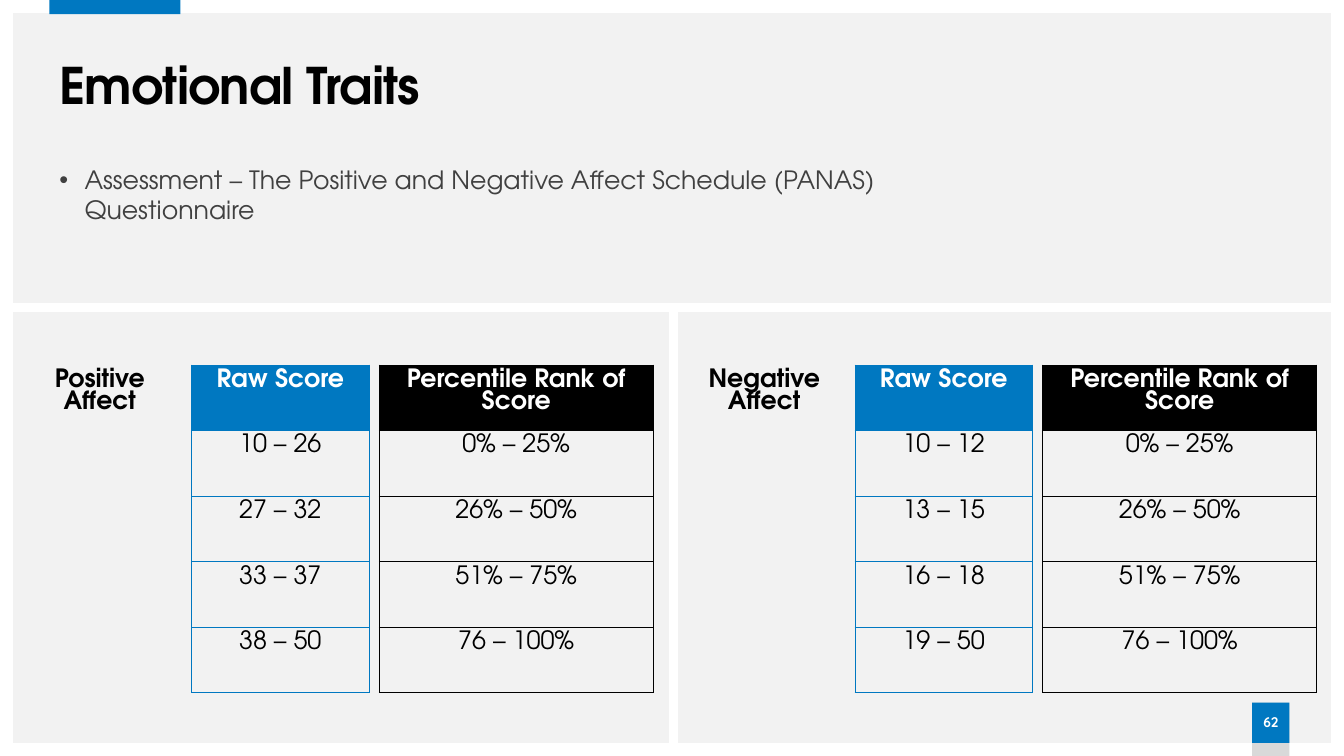
from lxml import etree
from pptx import Presentation
from pptx.dml.color import RGBColor
from pptx.enum.shapes import MSO_CONNECTOR, MSO_SHAPE
from pptx.enum.text import MSO_ANCHOR, PP_ALIGN
from pptx.oxml import parse_xml
from pptx.oxml.ns import nsdecls, qn
from pptx.util import Inches, Pt

BLUE = RGBColor(0x00, 0x78, 0xC1)
BLACK = RGBColor(0x00, 0x00, 0x00)
WHITE = RGBColor(0xFF, 0xFF, 0xFF)
PALE_GRAY = RGBColor(0xF2, 0xF2, 0xF2)
TAB_GRAY = RGBColor(0xD9, 0xD9, 0xD9)
TEXT_GRAY = RGBColor(0x40, 0x40, 0x40)
FONT = "TeX Gyre Adventor"
PLAIN_TABLE_STYLE = "{2D5ABB26-0587-4C30-8999-92F81FD0307C}"
ROW_COUNT = 5
ROW_HEIGHT = 0.65
TABLE_TOP = 3.62


def style_text(paragraph, size, color, bold=False, name=FONT):
    for span in paragraph.runs:
        span.font.name = name
        span.font.size = Pt(size)
        span.font.bold = bold
        span.font.color.rgb = color


def add_column(page, left, width, texts, color=None):
    """Add a one-column table; a color gives it borders and a filled header."""
    frame = page.shapes.add_table(
        ROW_COUNT, 1, Inches(left), Inches(TABLE_TOP),
        Inches(width), Inches(ROW_HEIGHT * ROW_COUNT))
    table = frame.table
    table.horz_banding = False
    table.first_row = False
    table._tbl.tblPr.find(qn("a:tableStyleId")).text = PLAIN_TABLE_STYLE
    for index, text in enumerate(texts):
        cell = table.cell(index, 0)
        header = index == 0
        if color is not None:
            properties = cell._tc.get_or_add_tcPr()
            for side in ("lnL", "lnR", "lnT", "lnB"):
                properties.append(parse_xml(
                    f'<a:{side} {nsdecls("a")} w="{Pt(0.5)}"><a:solidFill>'
                    f'<a:srgbClr val="{color}"/></a:solidFill></a:{side}>'))
        if header and color is not None:
            cell.fill.solid()
            cell.fill.fore_color.rgb = color
        else:
            cell.fill.background()
        if text:
            para = cell.text_frame.paragraphs[0]
            para.text = text
            para.alignment = PP_ALIGN.CENTER
            para.line_spacing = Pt(16)
            style_text(para, 18, WHITE if header and color is not None else BLACK, header)


deck = Presentation()
deck.slide_width = Inches(13.33)
deck.slide_height = Inches(7.5)
page = deck.slides.add_slide(deck.slide_layouts[5])
page.background.fill.solid()
page.background.fill.fore_color.rgb = PALE_GRAY

# Frame, top accent and page number tab
decorations = [
    (MSO_SHAPE.FRAME, 0, 0, 13.33, 7.5, WHITE),
    (MSO_SHAPE.RECTANGLE, 0.49, 0, 1.3, 0.14, BLUE),
    (MSO_SHAPE.RECTANGLE, 12.42, 6.97, 0.37, 0.53, TAB_GRAY),
    (MSO_SHAPE.RECTANGLE, 12.42, 6.97, 0.37, 0.4, BLUE),
]
for kind, left, top, width, height, color in decorations:
    shape = page.shapes.add_shape(
        kind, Inches(left), Inches(top), Inches(width), Inches(height))
    shape.shadow.inherit = False
    shape.fill.solid()
    shape.fill.fore_color.rgb = color
    shape.line.fill.background()
    if kind == MSO_SHAPE.FRAME:
        shape.adjustments[0] = 0.017

number_tab = shape.text_frame
number_tab.margin_left = number_tab.margin_right = 0
number_tab.vertical_anchor = MSO_ANCHOR.MIDDLE
para = number_tab.paragraphs[0]
para.text = "62"
para.alignment = PP_ALIGN.CENTER
para.line_spacing = 0.9
style_text(para, 10, WHITE, True, "Quicksand")

# Title and introduction
title = page.shapes.title
title.left, title.top = Inches(0.49), Inches(0.55)
title.width, title.height = Inches(12.22), Inches(0.65)
title.text_frame.vertical_anchor = MSO_ANCHOR.MIDDLE
para = title.text_frame.paragraphs[0]
para.text = "Emotional Traits"
para.alignment = PP_ALIGN.LEFT
para.line_spacing = 0.9
style_text(para, 36, BLACK, True)
para.runs[0].font._element.set("spc", "-60")

body = page.shapes.add_textbox(Inches(0.49), Inches(1.58), Inches(8.88), Inches(0.98))
body.text_frame.word_wrap = True
para = body.text_frame.paragraphs[0]
para.text = "Assessment – The Positive and Negative Affect Schedule (PANAS) Questionnaire"
bullet_properties = para._p.get_or_add_pPr()
bullet_properties.set("marL", str(Inches(0.25)))
bullet_properties.set("indent", str(Inches(-0.25)))
bullet_color = etree.SubElement(bullet_properties, qn("a:buClr"))
etree.SubElement(bullet_color, qn("a:srgbClr"), val=str(TEXT_GRAY))
etree.SubElement(bullet_properties, qn("a:buFont"), typeface="Arial")
etree.SubElement(bullet_properties, qn("a:buChar"), char="•")
style_text(para, 18, TEXT_GRAY)

# Panel dividers
for start_x, start_y, end_x, end_y in [(6.68, 7.41, 6.68, 3.05), (13.24, 3.05, 0, 3.05)]:
    divider = page.shapes.add_connector(
        MSO_CONNECTOR.STRAIGHT, Inches(start_x), Inches(start_y),
        Inches(end_x), Inches(end_y))
    divider.line.color.rgb = WHITE
    divider.line.width = Pt(6)
    etree.SubElement(divider._element.spPr, qn("a:effectLst"))

# Score tables
percentiles = ["0% – 25%", "26% – 50%", "51% – 75%", "76 – 100%"]
affects = [
    ("Positive Affect", 0.18, 1.62, 1.9, ["10 – 26", "27 – 32", "33 – 37", "38 – 50"]),
    ("Negative Affect", 6.65, 1.86, 8.48, ["10 – 12", "13 – 15", "16 – 18", "19 – 50"]),
]
for label, label_left, label_width, score_left, scores in affects:
    add_column(page, label_left, label_width, [label, "", "", "", ""])
    add_column(page, score_left, 1.76, ["Raw Score", *scores], BLUE)
    add_column(page, score_left + 1.86, 2.72,
               ["Percentile Rank of Score", *percentiles], BLACK)

deck.save("out.pptx")
